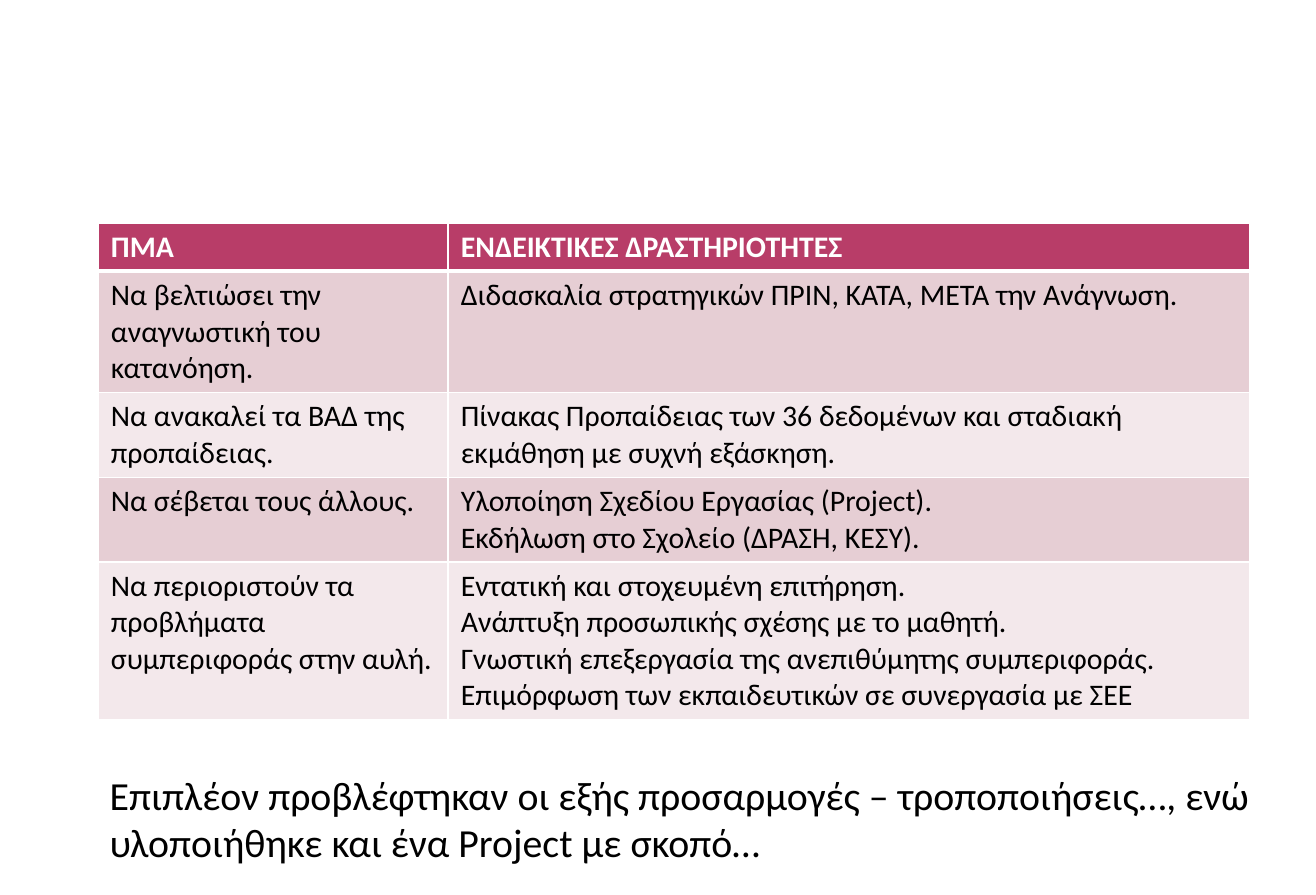
from lxml.etree import SubElement
from pptx import Presentation
from pptx.dml.color import RGBColor
from pptx.oxml.ns import qn
from pptx.util import Cm, Inches, Pt

PX = 914400 / 119.4
FONT = "Calibri"
WHITE, BLACK = "FFFFFF", "000000"
HEADER_FILL = "B83D68"
BAND_FILLS = ["E6CED4", "F3E8EB"]

GOALS = [
    ("ΠΜΑ", ["ΕΝΔΕΙΚΤΙΚΕΣ ΔΡΑΣΤΗΡΙΟΤΗΤΕΣ"]),
    ("Να βελτιώσει την αναγνωστική του κατανόηση.",
     ["Διδασκαλία στρατηγικών ΠΡΙΝ, ΚΑΤΑ, ΜΕΤΑ την Ανάγνωση."]),
    ("Να ανακαλεί τα ΒΑΔ της προπαίδειας.",
     ["Πίνακας Προπαίδειας των 36 δεδομένων και σταδιακή εκμάθηση με συχνή εξάσκηση."]),
    ("Να σέβεται τους άλλους.",
     ["Υλοποίηση Σχεδίου Εργασίας (Project).",
      "Εκδήλωση στο Σχολείο (ΔΡΑΣΗ, ΚΕΣΥ)."]),
    ("Να περιοριστούν τα προβλήματα συμπεριφοράς στην αυλή.",
     ["Εντατική και στοχευμένη επιτήρηση.",
      "Ανάπτυξη προσωπικής σχέσης με το μαθητή.",
      "Γνωστική επεξεργασία της ανεπιθύμητης συμπεριφοράς.",
      "Επιμόρφωση των εκπαιδευτικών σε συνεργασία με ΣΕΕ"]),
]
CLOSING = ("Επιπλέον προβλέφτηκαν οι εξής προσαρμογές – τροποποιήσεις…, "
           "ενώ υλοποιήθηκε και ένα Project με σκοπό…")

LEFT, TABLE_TOP = 98, 223
COLUMN_WIDTHS = [350, 802]
ROW_HEIGHTS = [44, 111, 78, 78, 144]
CELL_MARGIN = 13
CLOSING_BOX = (LEFT, 765, 1167, 109)


def px(length):
    return round(length * PX)


def color(hex_string):
    return RGBColor.from_string(hex_string)


def write(frame, lines, size, hex_string, bold=False):
    frame.text = "\n".join(lines)
    for paragraph in frame.paragraphs:
        font = paragraph.font
        font.name, font.size, font.bold = FONT, Pt(size), bold
        font.color.rgb = color(hex_string)


def add_borders(cell, widths):
    properties = cell._tc.get_or_add_tcPr()
    for side, width in widths.items():
        border = SubElement(properties, qn(f"a:ln{side}"), w=str(Pt(width)))
        fill = SubElement(border, qn("a:solidFill"))
        SubElement(fill, qn("a:srgbClr"), val=WHITE)


def add_goals(slide):
    goals = slide.shapes.add_table(
        len(GOALS), len(COLUMN_WIDTHS), px(LEFT), px(TABLE_TOP),
        px(sum(COLUMN_WIDTHS)), px(sum(ROW_HEIGHTS))).table
    for column, width in zip(goals.columns, COLUMN_WIDTHS):
        column.width = px(width)
    for index, (goal, activities) in enumerate(GOALS):
        goals.rows[index].height = px(ROW_HEIGHTS[index])
        header = index == 0
        for cell, lines in zip(goals.rows[index].cells, ([goal], activities)):
            add_borders(cell, {"L": 1, "R": 1, "T": 3 if index == 1 else 1,
                               "B": 3 if header else 1})
            cell.margin_left = cell.margin_right = px(CELL_MARGIN)
            cell.fill.solid()
            cell.fill.fore_color.rgb = color(
                HEADER_FILL if header else BAND_FILLS[(index - 1) % 2])
            write(cell.text_frame, lines, 18, WHITE if header else BLACK, header)


def add_closing(slide):
    closing = slide.shapes.add_textbox(*map(px, CLOSING_BOX)).text_frame
    closing.word_wrap = True
    write(closing, [CLOSING], 24, BLACK)


def main():
    presentation = Presentation()
    presentation.slide_width = Cm(28)
    presentation.slide_height = Inches(7.5)
    slide = presentation.slides.add_slide(presentation.slide_layouts[6])
    add_goals(slide)
    add_closing(slide)
    presentation.save("out.pptx")


if __name__ == "__main__":
    main()
